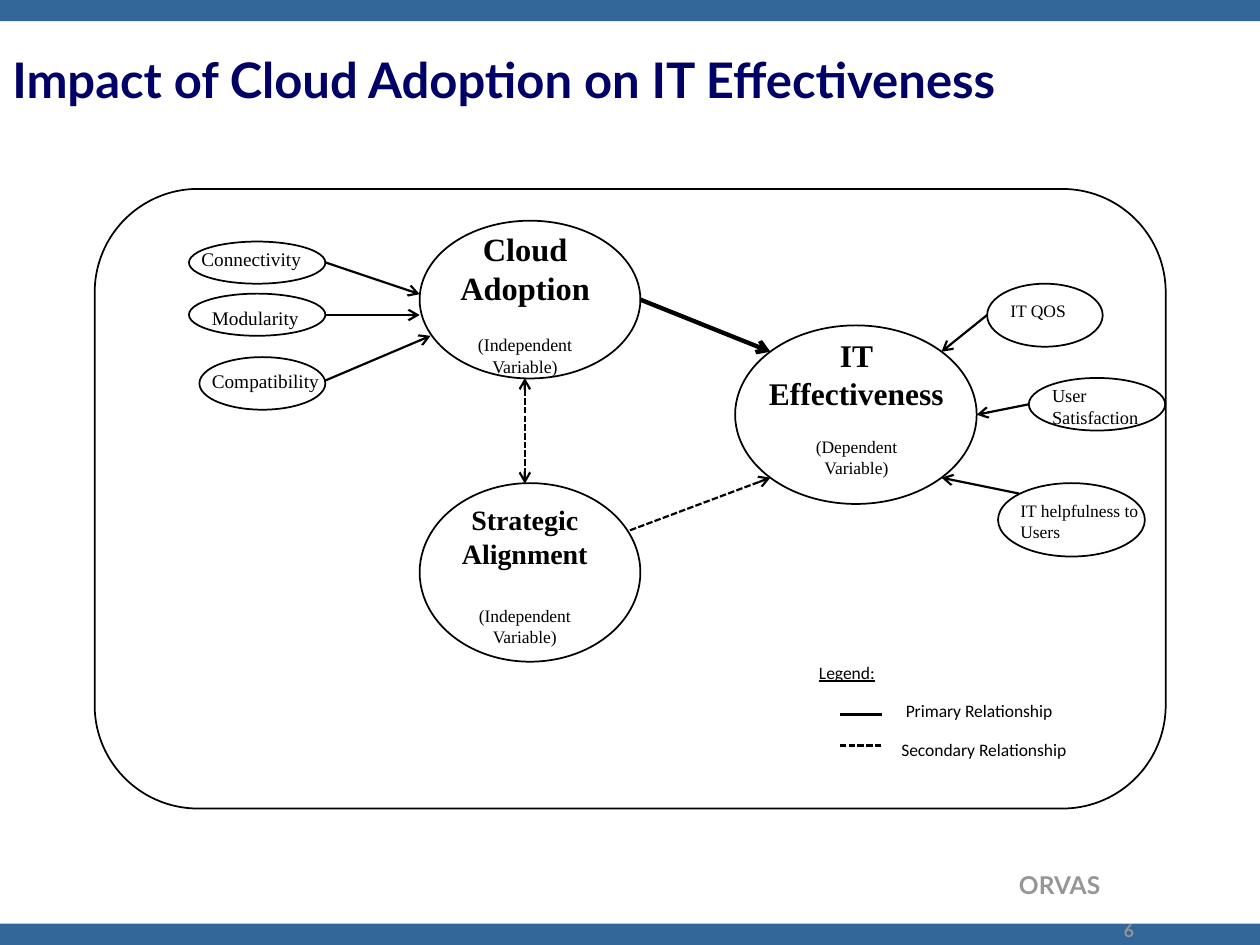
from typing import NamedTuple

from pptx import Presentation
from pptx.dml.color import RGBColor
from pptx.enum.dml import MSO_LINE
from pptx.enum.shapes import MSO_CONNECTOR, MSO_SHAPE
from pptx.enum.text import MSO_ANCHOR, PP_ALIGN
from pptx.oxml.ns import qn
from pptx.util import Cm, Pt
from lxml import etree

BLACK = RGBColor(0x00, 0x00, 0x00)
WHITE = RGBColor(0xFF, 0xFF, 0xFF)
BLUE = RGBColor(0x33, 0x66, 0x99)
NAVY = RGBColor(0x00, 0x00, 0x66)
GREY = RGBColor(0x96, 0x96, 0x96)

RECTANGLE, ROUNDED, ELLIPSE = MSO_SHAPE.RECTANGLE, MSO_SHAPE.ROUNDED_RECTANGLE, MSO_SHAPE.OVAL
LEFT, CENTER, RIGHT = PP_ALIGN.LEFT, PP_ALIGN.CENTER, PP_ALIGN.RIGHT
TOP, MIDDLE = MSO_ANCHOR.TOP, MSO_ANCHOR.MIDDLE
STRAIGHT, DASH = MSO_CONNECTOR.STRAIGHT, MSO_LINE.SQUARE_DOT

SERIF, SANS, HEADING = "Times New Roman", "Calibri", "Lato"
PAGE_WIDTH, PAGE_HEIGHT, BAR_HEIGHT = 25.4, 19.05, 0.43


class Area(NamedTuple):
    """Left, top, width and height in centimetres."""
    left: float
    top: float
    width: float
    height: float

    def lengths(self) -> list:
        return [Cm(value) for value in self]


class Variable(NamedTuple):
    ellipse: Area
    text: Area
    title: list
    title_size: float
    role: list
    role_size: float
    gap: float


class Factor(NamedTuple):
    ellipse: Area
    text: Area
    label: str
    size: float


class Link(NamedTuple):
    start: tuple
    end: tuple
    width: float = 1.25
    dashed: bool = False
    arrows: tuple = ("tailEnd",)


VARIABLES = [
    Variable(Area(8.46, 4.45, 4.45, 3.18), Area(8.26, 4.62, 4.65, 2.95),
             ["Cloud", "Adoption"], 18.5, ["(Independent", "Variable)"], 10.2, 15.5),
    Variable(Area(14.82, 6.56, 4.87, 3.6), Area(15.04, 6.78, 4.45, 2.9),
             ["IT", "Effectiveness"], 18, ["(Dependent", "Variable)"], 10, 13.5),
    Variable(Area(8.46, 9.74, 4.45, 3.6), Area(8.46, 10.14, 4.24, 2.9),
             ["Strategic", "Alignment"], 16, ["(Independent", "Variable)"], 10, 20),
]
FACTORS = [
    Factor(Area(3.81, 4.87, 2.75, 0.85), Area(3.81, 4.87, 2.75, 0.74), "Connectivity", 11),
    Factor(Area(3.81, 5.92, 2.75, 0.85), Area(4.02, 6.04, 2.75, 0.74), "Modularity", 11),
    Factor(Area(4.02, 7.2, 2.54, 1.06), Area(4.02, 7.32, 2.75, 0.74), "Compatibility", 11),
    Factor(Area(19.9, 5.72, 2.33, 1.27), Area(20.12, 5.93, 2.75, 0.69), "IT QOS", 10),
    Factor(Area(20.74, 7.62, 2.75, 1.06), Area(20.96, 7.62, 2.75, 1.14),
           "User Satisfaction", 10.5),
    Factor(Area(20.12, 9.74, 2.96, 1.48), Area(20.32, 9.95, 2.96, 1.12),
           "IT helpfulness to Users", 10),
]
LINKS = [
    Link((12.91, 6.04), (15.53, 7.09), width=2.5),
    Link((12.7, 10.69), (15.53, 9.63), dashed=True),
    Link((10.58, 7.62), (10.58, 9.75), dashed=True, arrows=("headEnd", "tailEnd")),
    Link((6.56, 5.29), (8.46, 5.93)),
    Link((6.56, 6.35), (8.46, 6.35)),
    Link((6.56, 7.67), (8.68, 6.77)),
    Link((19.9, 6.35), (18.98, 7.09)),
    Link((20.74, 8.15), (19.69, 8.36)),
    Link((20.54, 9.95), (18.98, 9.63)),
    Link((16.93, 14.4), (17.78, 14.4), width=2, arrows=()),
    Link((16.93, 15.03), (17.78, 15.03), dashed=True, arrows=()),
]


def add_outline(page, kind, area: Area):
    shape = page.shapes.add_shape(kind, *area.lengths())
    shape.shadow.inherit = False
    shape.fill.background()
    shape.line.color.rgb = BLACK
    shape.line.width = Pt(1)
    return shape


def add_filled(page, area: Area, color: RGBColor):
    shape = page.shapes.add_shape(RECTANGLE, *area.lengths())
    shape.shadow.inherit = False
    shape.fill.solid()
    shape.fill.fore_color.rgb = color
    shape.line.fill.background()
    return shape


def style(para, size: float, name: str, color=BLACK, bold=False, align=LEFT) -> None:
    para.alignment = align
    font = para.font
    font.size, font.name, font.bold = Pt(size), name, bold
    font.color.rgb = color


def set_frame(shape, anchor=TOP, inset=True):
    frame = shape.text_frame
    frame.word_wrap = True
    frame.vertical_anchor = anchor
    if not inset:
        frame.margin_left = frame.margin_right = frame.margin_top = frame.margin_bottom = 0
    return frame


def add_label(page, area: Area, text: str, size: float, name: str, color=BLACK,
              bold=False, align=LEFT, anchor=TOP) -> None:
    frame = set_frame(page.shapes.add_textbox(*area.lengths()), anchor)
    frame.text = text
    style(frame.paragraphs[0], size, name, color, bold, align)


def add_variable(page, variable: Variable) -> None:
    add_outline(page, ELLIPSE, variable.ellipse)
    frame = set_frame(page.shapes.add_textbox(*variable.text.lengths()), inset=False)
    frame.text = "\n".join(variable.title + variable.role)
    title_count = len(variable.title)
    for index, para in enumerate(frame.paragraphs):
        is_title = index < title_count
        size = variable.title_size if is_title else variable.role_size
        style(para, size, SERIF, bold=is_title, align=CENTER)
    frame.paragraphs[title_count].space_before = Pt(variable.gap)


def add_link(page, link: Link) -> None:
    points = [Cm(value) for value in link.start + link.end]
    connector = page.shapes.add_connector(STRAIGHT, *points)
    connector.line.color.rgb = BLACK
    connector.line.width = Pt(link.width)
    if link.dashed:
        connector.line.dash_style = DASH
    properties = connector._element.spPr
    outline = properties.find(qn("a:ln"))
    for arrow in link.arrows:
        etree.SubElement(outline, qn(f"a:{arrow}"), type="arrow")
    etree.SubElement(properties, qn("a:effectLst"))


def add_legend(page) -> None:
    box = add_filled(page, Area(16.51, 13.34, 5.72, 1.9), WHITE)
    frame = set_frame(box, inset=False)
    frame.text = "Legend:\nPrimary Relationship\nSecondary Relationship"
    for para, indent in zip(frame.paragraphs, (0, 1.75, 1.66)):
        para._p.get_or_add_pPr().set("marL", str(Cm(indent)))
        para.space_after = Pt(10)
        style(para, 10, SANS)
    frame.paragraphs[0].font.underline = True


def main() -> None:
    deck = Presentation()
    deck.slide_width, deck.slide_height = Cm(PAGE_WIDTH), Cm(PAGE_HEIGHT)
    page = deck.slides.add_slide(deck.slide_layouts[6])

    for top in (0, PAGE_HEIGHT - BAR_HEIGHT):
        add_filled(page, Area(0, top, PAGE_WIDTH, BAR_HEIGHT), BLUE)
    add_label(page, Area(15.8, 17.42, 6.63, 0.84), "ORVAS", 14, HEADING, GREY, True, RIGHT)
    add_label(page, Area(20.12, 18.42, 5.28, 0.63), "6", 10, HEADING, GREY, True, CENTER)
    add_label(page, Area(0, 0.43, PAGE_WIDTH, 2.34),
              "Impact of Cloud Adoption on IT Effectiveness", 28, HEADING, NAVY, True,
              anchor=MIDDLE)

    add_outline(page, ROUNDED, Area(1.91, 3.81, 21.59, 12.49))
    add_legend(page)
    for variable in VARIABLES:
        add_variable(page, variable)
    for factor in FACTORS:
        add_outline(page, ELLIPSE, factor.ellipse)
        add_label(page, factor.text, factor.label, factor.size, SERIF)
    for link in LINKS:
        add_link(page, link)

    deck.save("out.pptx")


if __name__ == "__main__":
    main()
